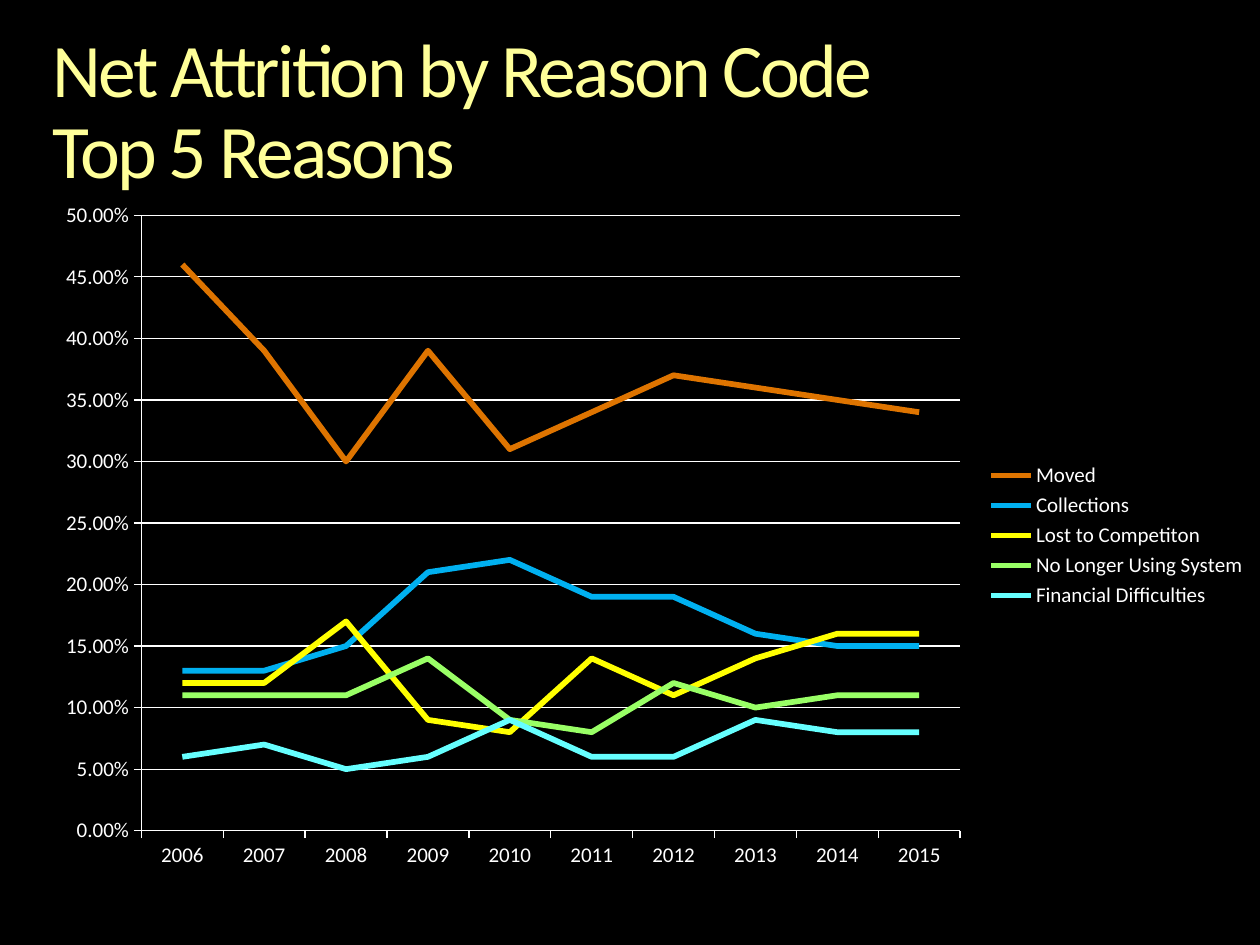
import pptx
import pptx.chart.data
import pptx.dml.color
import pptx.enum.chart
import pptx.enum.text
import pptx.util
from pptx.util import Cm

RGBColor = pptx.dml.color.RGBColor
BLACK = RGBColor(0x00, 0x00, 0x00)
WHITE = RGBColor(0xFF, 0xFF, 0xFF)
PALE_YELLOW = RGBColor(0xFF, 0xFF, 0x99)
ORANGE = RGBColor(0xDE, 0x74, 0x00)
BLUE = RGBColor(0x00, 0xB0, 0xF0)
YELLOW = RGBColor(0xFF, 0xFF, 0x00)
GREEN = RGBColor(0x99, 0xFF, 0x66)
CYAN = RGBColor(0x66, 0xFF, 0xFF)
FONT = "Calibri"

YEARS = [str(year) for year in range(2006, 2016)]
REASONS = [
    ("Moved", ORANGE,
     (0.46, 0.39, 0.3, 0.39, 0.31, 0.34, 0.37, 0.36, 0.35, 0.34)),
    ("Collections", BLUE,
     (0.13, 0.13, 0.15, 0.21, 0.22, 0.19, 0.19, 0.16, 0.15, 0.15)),
    ("Lost to Competiton", YELLOW,
     (0.12, 0.12, 0.17, 0.09, 0.08, 0.14, 0.11, 0.14, 0.16, 0.16)),
    ("No Longer Using System", GREEN,
     (0.11, 0.11, 0.11, 0.14, 0.09, 0.08, 0.12, 0.1, 0.11, 0.11)),
    ("Financial Difficulties", CYAN,
     (0.06, 0.07, 0.05, 0.06, 0.09, 0.06, 0.06, 0.09, 0.08, 0.08)),
]


def style_font(font, size, color):
    font.name = FONT
    font.size = pptx.util.Pt(size)
    font.color.rgb = color


def style_line(line, width, color):
    line.width = pptx.util.Pt(width)
    line.color.rgb = color


def add_title(slide, left, top, width, height):
    frame = slide.shapes.add_textbox(left, top, width, height).text_frame
    frame.word_wrap = True
    frame.vertical_anchor = pptx.enum.text.MSO_ANCHOR.TOP
    frame.margin_left = frame.margin_right = 0
    frame.margin_top = frame.margin_bottom = 0
    paragraph = frame.paragraphs[0]
    paragraph.text = "Net Attrition by Reason Code\vTop 5 Reasons"
    paragraph.line_spacing = 0.9
    style_font(paragraph.font, 43.2, PALE_YELLOW)
    for run in paragraph.runs:
        run._r.get_or_add_rPr().set("spc", "-150")


def style_axis(axis):
    axis.major_tick_mark = pptx.enum.chart.XL_TICK_MARK.OUTSIDE
    axis.minor_tick_mark = pptx.enum.chart.XL_TICK_MARK.NONE
    style_font(axis.tick_labels.font, 12, WHITE)
    style_line(axis.format.line, 0.75, WHITE)


def add_attrition_chart(slide, left, top, width, height):
    data = pptx.chart.data.CategoryChartData(number_format="0.00%")
    data.categories = YEARS
    for name, color, values in REASONS:
        data.add_series(name, values)
    chart = slide.shapes.add_chart(
        pptx.enum.chart.XL_CHART_TYPE.LINE, left, top, width, height, data
    ).chart
    chart.has_title = False
    style_font(chart.font, 10, WHITE)

    chart.has_legend = True
    chart.legend.position = pptx.enum.chart.XL_LEGEND_POSITION.RIGHT
    chart.legend.include_in_layout = False
    style_font(chart.legend.font, 12, WHITE)

    style_axis(chart.category_axis)
    value_axis = chart.value_axis
    style_axis(value_axis)
    value_axis.minimum_scale = 0
    value_axis.maximum_scale = 0.5
    value_axis.major_unit = 0.05
    value_axis.tick_labels.number_format = "0.00%"
    value_axis.tick_labels.number_format_is_linked = False
    value_axis.has_major_gridlines = True
    style_line(value_axis.major_gridlines.format.line, 0.75, WHITE)

    plot = chart.plots[0]
    plot.vary_by_categories = False
    for series, (name, color, values) in zip(plot.series, REASONS):
        series.smooth = False
        series.marker.style = pptx.enum.chart.XL_MARKER_STYLE.NONE
        style_line(series.format.line, 3.25, color)


def main():
    presentation = pptx.Presentation()
    presentation.slide_width = Cm(25.4)
    presentation.slide_height = Cm(19.05)
    slide = presentation.slides.add_slide(presentation.slide_layouts[6])
    slide.background.fill.solid()
    slide.background.fill.fore_color.rgb = BLACK
    add_title(slide, Cm(1.06), Cm(0.64), Cm(23.28), Cm(1.85))
    add_attrition_chart(slide, Cm(0.84), Cm(3.81), Cm(24.56), Cm(13.97))
    presentation.save("out.pptx")


if __name__ == "__main__":
    main()
